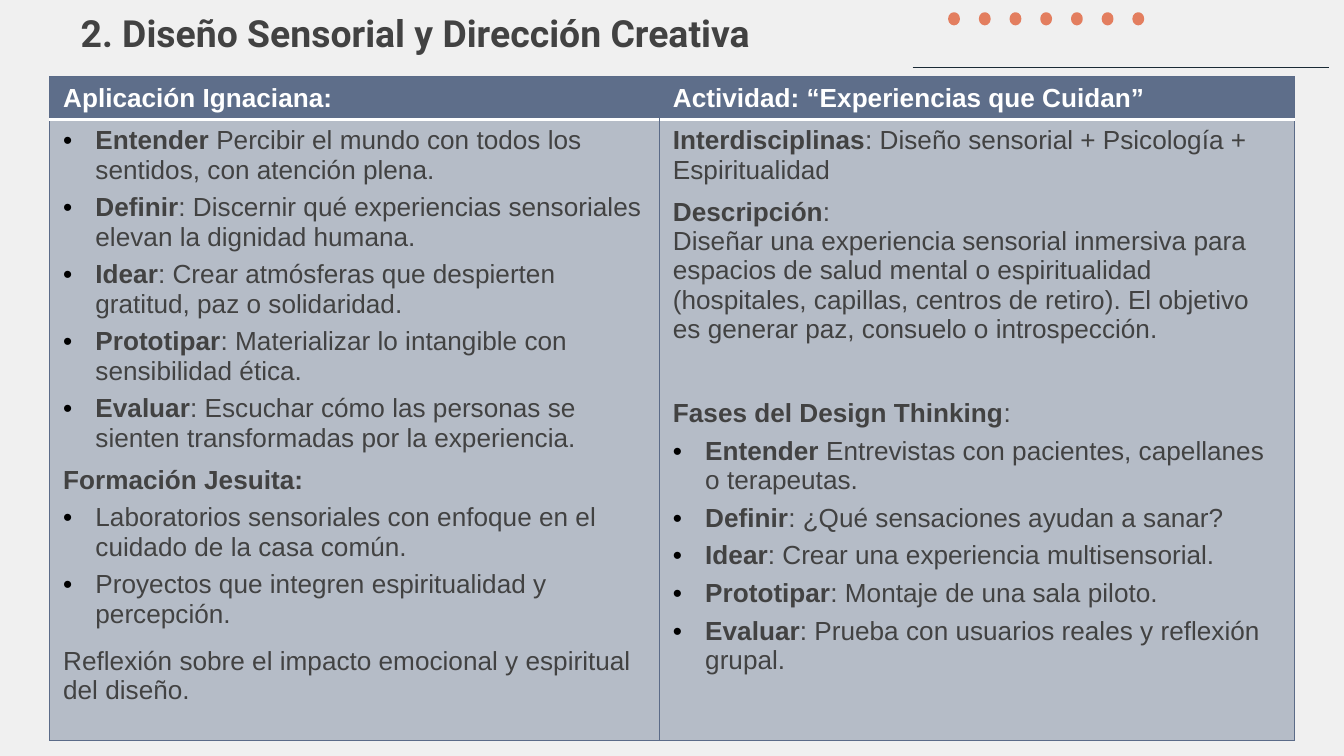
from lxml import etree
from pptx import Presentation
from pptx.dml.color import RGBColor
from pptx.enum.shapes import MSO_CONNECTOR, MSO_SHAPE
from pptx.enum.text import MSO_ANCHOR, MSO_AUTO_SIZE, PP_ALIGN
from pptx.oxml.ns import qn
from pptx.util import Emu, Inches, Pt

BACKGROUND = RGBColor(0xF0, 0xF0, 0xF0)
TEXT = RGBColor(0x42, 0x42, 0x42)
WHITE = RGBColor(0xFF, 0xFF, 0xFF)
BLACK = RGBColor(0, 0, 0)
SLATE = RGBColor(0x5E, 0x6E, 0x8A)
BORDER = RGBColor(0x5B, 0x6B, 0x88)
CORAL = RGBColor(0xE3, 0x7E, 0x5F)
NAVY = RGBColor(0x1A, 0x2A, 0x35)

BODY_OPACITY = 40
BULLET_INDENT = Inches(0.24)
HEADING = {"before": 4.5}
BULLET = {"before": 2.2, "bullet": True}

TITLE = "2. Diseño Sensorial y Dirección Creativa"
HEADERS = ["Aplicación Ignaciana:", "Actividad:\u00a0“Experiencias que Cuidan”"]

# Each entry: bold lead, regular text, paragraph format
APPLICATION = [
    ("Entender ", "Percibir el mundo con todos los sentidos, con atención plena.", BULLET),
    ("Definir", ": Discernir qué experiencias sensoriales elevan la dignidad humana.", BULLET),
    ("Idear", ": Crear atmósferas que despierten gratitud, paz o solidaridad.", BULLET),
    ("Prototipar", ": Materializar lo intangible con sensibilidad ética.", BULLET),
    ("Evaluar", ": Escuchar cómo las personas se sienten transformadas por la experiencia.", BULLET),
    ("Formación Jesuita:", "", HEADING),
    ("", "Laboratorios sensoriales con enfoque en el cuidado de la casa común.", BULLET),
    ("", "Proyectos que integren espiritualidad y percepción.", BULLET),
    ("", "Reflexión sobre el impacto emocional y espiritual del diseño.",
     {"before": 7.3, "after": 1.7, "line": 15.8}),
]
ACTIVITY = [
    ("Interdisciplinas", ": Diseño sensorial + Psicología + Espiritualidad", HEADING),
    ("Descripción", ":\nDiseñar una experiencia sensorial inmersiva para espacios de salud "
     "mental o espiritualidad (hospitales, capillas, centros de retiro). El objetivo es "
     "generar paz, consuelo o introspección.", HEADING),
    ("Fases del Design Thinking", ":", {"before": 27}),
    ("Entender ", "Entrevistas con pacientes, capellanes o terapeutas.", BULLET),
    ("Definir", ": ¿Qué sensaciones ayudan a sanar?", BULLET),
    ("Idear", ": Crear una experiencia multisensorial.", BULLET),
    ("Prototipar", ": Montaje de una sala piloto.", BULLET),
    ("Evaluar", ": Prueba con usuarios reales y reflexión grupal.", BULLET),
]


def add_bullet(paragraph):
    properties = paragraph._p.get_or_add_pPr()
    properties.set("marL", str(BULLET_INDENT))
    properties.set("indent", str(-BULLET_INDENT))
    color = etree.SubElement(properties, qn("a:buClr"))
    etree.SubElement(color, qn("a:srgbClr"), val=str(BLACK))
    etree.SubElement(properties, qn("a:buFont"), typeface="Arial")
    etree.SubElement(properties, qn("a:buChar"), char="•")


def write(frame, lead, text="", *, first=False, size=14, font="Arial", color=TEXT,
          before=0, after=2.2, line=None, bullet=False):
    """Write one paragraph: a bold lead followed by regular text."""
    paragraph = frame.paragraphs[0] if first else frame.add_paragraph()
    if bullet:
        add_bullet(paragraph)
    paragraph.alignment = PP_ALIGN.LEFT
    paragraph.space_before = Pt(0 if first else before)
    paragraph.space_after = Pt(after)
    if line:
        paragraph.line_spacing = Pt(line)
    for content, bold in ((lead, True), (text, False)):
        if not content:
            continue
        for index, part in enumerate(content.split("\n")):
            if index:
                paragraph.add_line_break()
            run = paragraph.add_run()
            run.text = part
            run.font.size, run.font.name, run.font.bold = Pt(size), font, bold
            run.font.color.rgb = color


def format_cell(cell, borders, opacity=None):
    """Fill a cell and draw its borders, given as side: (colour, points) or None."""
    cell.fill.solid()
    cell.fill.fore_color.rgb = SLATE
    properties = cell._tc.get_or_add_tcPr()
    if opacity:
        color = properties.find(".//" + qn("a:srgbClr"))
        etree.SubElement(color, qn("a:alpha"), val=str(opacity * 1000))
    for index, side in enumerate("LRTB"):
        border = etree.Element(qn("a:ln" + side))
        if borders[side]:
            rgb, points = borders[side]
            border.set("w", str(Pt(points)))
            fill = etree.SubElement(border, qn("a:solidFill"))
            etree.SubElement(fill, qn("a:srgbClr"), val=str(rgb))
        else:
            etree.SubElement(border, qn("a:noFill"))
        properties.insert(index, border)


def place_title(slide, left, top, width, height):
    title = slide.shapes.title
    title.left, title.top, title.width, title.height = left, top, width, height
    frame = title.text_frame
    frame.word_wrap = True
    frame.auto_size = MSO_AUTO_SIZE.NONE
    frame.vertical_anchor = MSO_ANCHOR.TOP
    write(frame, TITLE, first=True, size=20, font="Roboto", line=18)


def place_table(slide, left, top, width, height):
    table = slide.shapes.add_table(2, 2, left, top, width, height).table
    table.columns[0].width = Emu(int(width * 0.49))
    table.columns[1].width = width - table.columns[0].width
    table.rows[0].height = Inches(0.31)
    table.rows[1].height = height - table.rows[0].height
    thin, rule = (BORDER, 0.75), (WHITE, 2)
    for column, (header, entries) in enumerate(zip(HEADERS, (APPLICATION, ACTIVITY))):
        # Header cell, open towards its neighbour
        cell = table.cell(0, column)
        sides = {"L": None if column else thin, "R": thin if column else None}
        format_cell(cell, {**sides, "T": thin, "B": rule})
        write(cell.text_frame, header, first=True, color=WHITE, after=0)
        # Body cell
        cell = table.cell(1, column)
        format_cell(cell, {"L": thin, "R": thin, "T": rule, "B": thin}, BODY_OPACITY)
        for index, (lead, text, options) in enumerate(entries):
            write(cell.text_frame, lead, text, first=index == 0, **options)


def place_ornament(slide, left, top, width, height):
    """A row of seven dots above a thin rule."""
    pitch, first_dot = width * 0.0737, left + width * 0.09
    for index in range(7):
        dot = slide.shapes.add_shape(MSO_SHAPE.OVAL, int(first_dot + index * pitch), top,
                                     Inches(0.06), Inches(0.07))
        dot.shadow.inherit = False
        dot.fill.solid()
        dot.fill.fore_color.rgb = dot.line.color.rgb = CORAL
        dot.line.width = Pt(2)
    bottom = top + height
    rule = slide.shapes.add_connector(MSO_CONNECTOR.STRAIGHT, left, bottom, left + width, bottom)
    rule.line.color.rgb = NAVY
    rule.line.width = Pt(0.75)
    etree.SubElement(rule._element.spPr, qn("a:effectLst"))


def main():
    presentation = Presentation()
    presentation.slide_width = Inches(10)
    presentation.slide_height = presentation.slide_width * 9 // 16
    slide = presentation.slides.add_slide(presentation.slide_layouts[5])
    slide.background.fill.solid()
    slide.background.fill.fore_color.rgb = BACKGROUND

    def box(left, top, width, height):
        """Turn hundredths of an inch on a 1000-wide slide into lengths."""
        unit = presentation.slide_width / 1000
        return [Emu(int(length * unit)) for length in (left, top, width, height)]

    place_table(slide, *box(37, 57, 926, 493))
    place_title(slide, *box(50, 11, 958, 35))
    place_ornament(slide, *box(679, 10.5, 310, 39.5))
    presentation.save("out.pptx")


if __name__ == "__main__":
    main()
